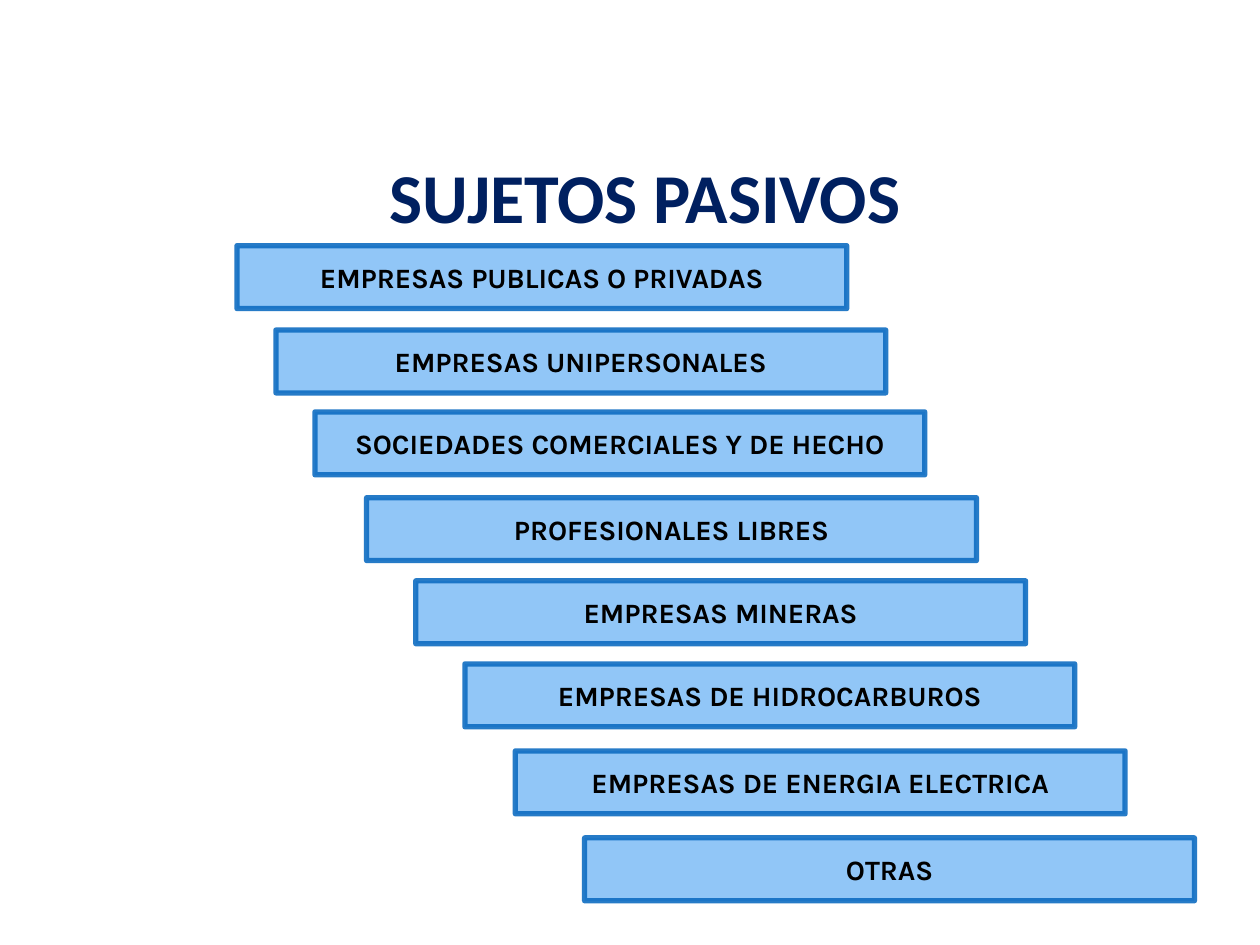
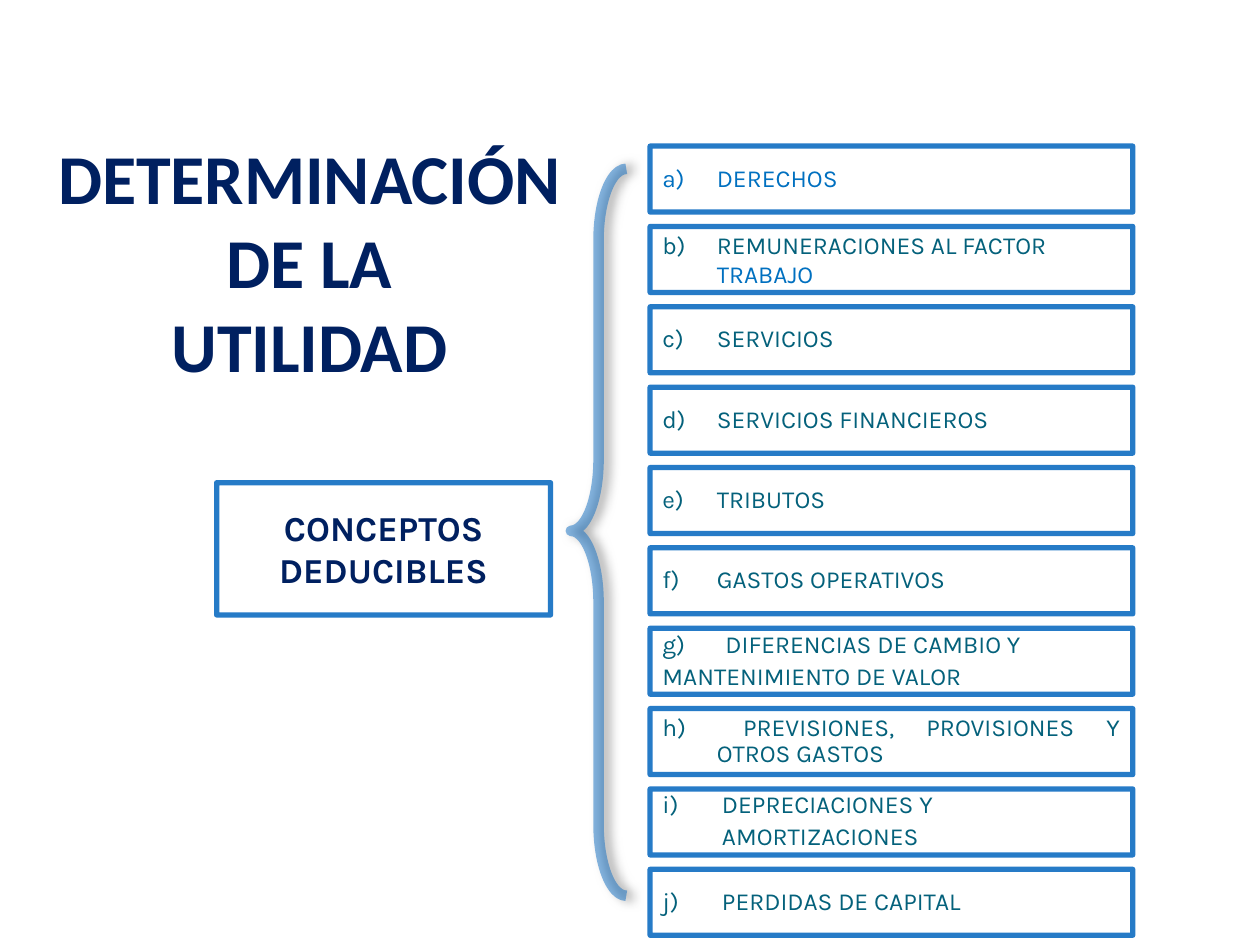
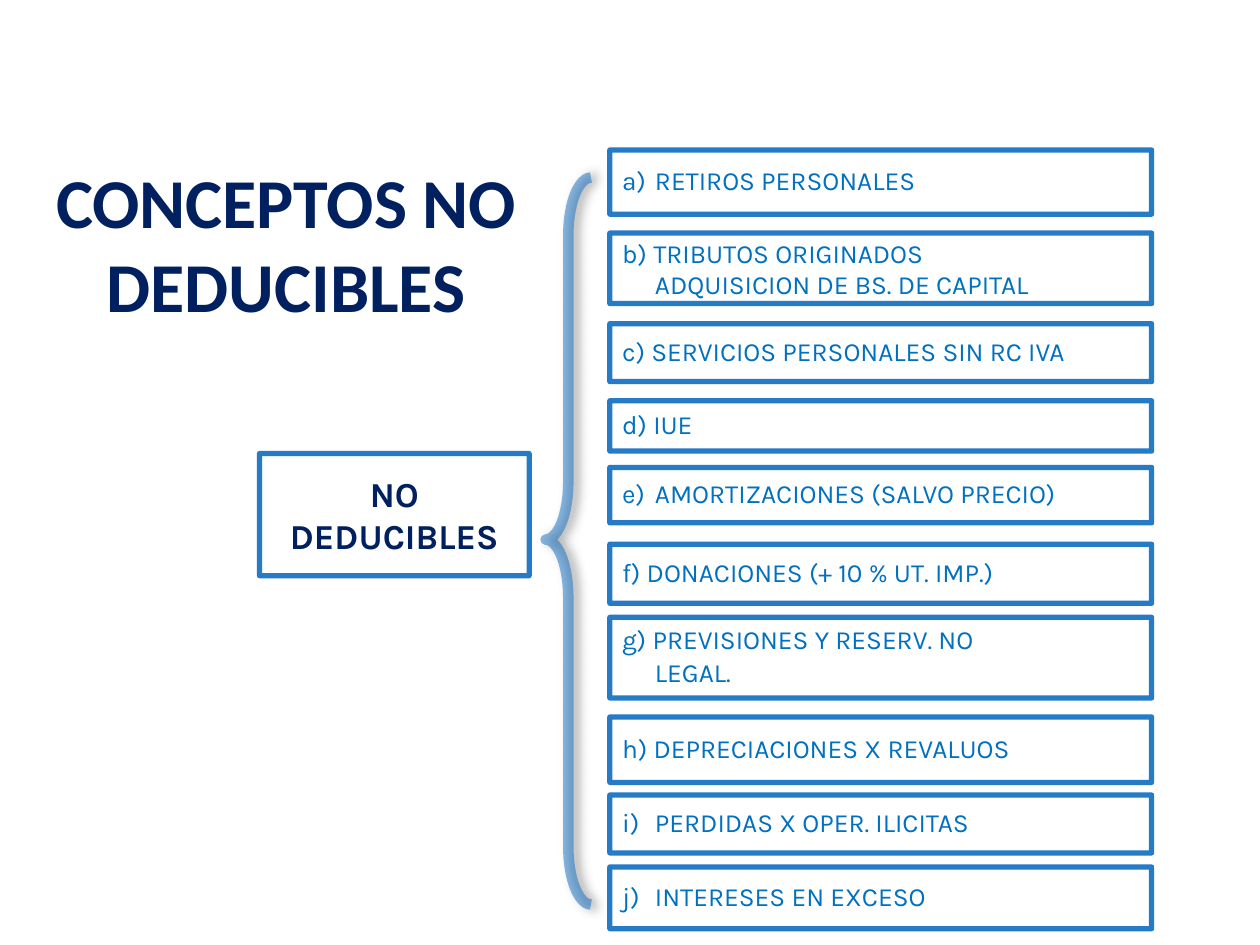
from lxml.etree import SubElement
from pptx import Presentation
from pptx.dml.color import RGBColor
from pptx.enum.shapes import MSO_SHAPE
from pptx.enum.text import MSO_ANCHOR, MSO_AUTO_SIZE, PP_ALIGN
from pptx.oxml.ns import qn
from pptx.util import Pt

COLORS = {
    "navy": "002060",
    "blue": "0070C0",
    "teal": "04617B",
    "line": "0F6DC2",
    "step": "91C6F7",
    "white": "FFFFFF",
    "black": "000000",
}
TITLE_FONT = "Calibri"
BODY_FONT = "Karla"

# Slide 1: text, left and top of each step
STEPS = [
    ("EMPRESAS PUBLICAS O PRIVADAS", 135.4, 140.4),
    ("EMPRESAS UNIPERSONALES", 157.7, 188.6),
    ("SOCIEDADES COMERCIALES Y DE HECHO", 180, 235.4),
    ("PROFESIONALES LIBRES", 209.5, 284.4),
    ("EMPRESAS MINERAS", 237.6, 331.9),
    ("EMPRESAS DE HIDROCARBUROS", 265.7, 379.4),
    ("EMPRESAS DE ENERGIA ELECTRICA", 294.5, 429.1),
    ("OTRAS", 334.1, 478.8),
]

# Slide 2: lines of each concept and the format that differs
DEDUCTIBLE = [
    (["DERECHOS"], {"numbered": True, "color": "blue"}),
    (["b) \tREMUNERACIONES AL FACTOR", "\tTRABAJO"],
     {"spacing": 1, "before": 0, "last_color": "blue"}),
    (["c) \tSERVICIOS"], {}),
    (["d) \tSERVICIOS FINANCIEROS"], {}),
    (["e) \tTRIBUTOS"], {}),
    (["f) \tGASTOS OPERATIVOS"], {}),
    (["DIFERENCIAS DE CAMBIO Y", "MANTENIMIENTO DE VALOR"],
     {"numbered": True, "indent": 36}),
    (["h) \tPREVISIONES, PROVISIONES Y OTROS GASTOS"], {}),
    (["DEPRECIACIONES Y", "\tAMORTIZACIONES"], {"numbered": True, "indent": 34}),
    (["j)\tPERDIDAS DE CAPITAL"], {"indent": 34}),
]
DEDUCTIBLE_ROWS = [(83.5 + 45.92 * index, 37.7) for index in range(len(DEDUCTIBLE))]

# Slide 3: the same, with top and height of each row
NON_DEDUCTIBLE = [
    (["RETIROS PERSONALES"], {"numbered": True}),
    (["b) TRIBUTOS ORIGINADOS", "\tADQUISICION DE BS. DE CAPITAL"],
     {"spacing": 1, "before": 0}),
    (["c) SERVICIOS PERSONALES SIN RC IVA"], {}),
    (["d) IUE"], {}),
    (["e)\tAMORTIZACIONES (SALVO PRECIO)"], {}),
    (["f) DONACIONES (+ 10 % UT. IMP.)"], {"indent": 0}),
    (["g) PREVISIONES Y RESERV. NO", "\tLEGAL."], {}),
    (["h) DEPRECIACIONES X REVALUOS"], {"indent": 0}),
    (["PERDIDAS X OPER. ILICITAS"], {"numbered": True}),
    (["j)\tINTERESES EN EXCESO"], {}),
]
NON_DEDUCTIBLE_ROWS = [
    (85.7, 36.7), (133.2, 40.3), (185, 33.1), (229, 28.8), (267.1, 31.7),
    (311, 33.8), (352.8, 46.1), (409.7, 37.4), (454.3, 33.1), (495.4, 35.3),
]


def rgb(name):
    return RGBColor.from_string(COLORS[name])


def write_text(shape, lines, *, size, color, font=BODY_FONT, bold=False,
               align=PP_ALIGN.CENTER, anchor=MSO_ANCHOR.MIDDLE, spacing=None,
               before=0, indent=0, number=None, last_color=None):
    """Fill a shape with one paragraph per line."""
    frame = shape.text_frame
    frame.word_wrap = True
    frame.auto_size = MSO_AUTO_SIZE.NONE
    frame.vertical_anchor = anchor
    for index, line in enumerate(lines):
        paragraph = frame.paragraphs[0] if index == 0 else frame.add_paragraph()
        paragraph.alignment = align
        paragraph.line_spacing = spacing
        paragraph.space_before = Pt(before if index else 0)
        properties = paragraph._p.get_or_add_pPr()
        if indent:
            properties.set("marL", str(Pt(indent)))
            properties.set("indent", str(-Pt(indent)))
        if number and index == 0:
            SubElement(properties, qn("a:buAutoNum"),
                       type="alphaLcParenR", startAt=str(number))
        run = paragraph.add_run()
        run.text = line
        run.font.name = font
        run.font.size = Pt(size)
        run.font.bold = bold
        is_last = index == len(lines) - 1
        run.font.color.rgb = rgb(last_color if last_color and is_last else color)


def add_title(slide, lines, left, top, width, height):
    title = slide.shapes.title
    title.left, title.top = Pt(left), Pt(top)
    title.width, title.height = Pt(width), Pt(height)
    write_text(title, lines, size=40, color="navy", font=TITLE_FONT, bold=True,
               anchor=MSO_ANCHOR.TOP)


def add_outlined(slide, kind, left, top, width, height, *, fill=None,
                 line_width=3, opacity=90):
    """Add a shape with a translucent blue outline."""
    shape = slide.shapes.add_shape(kind, Pt(left), Pt(top), Pt(width), Pt(height))
    shape.shadow.inherit = False
    if fill:
        shape.fill.solid()
        shape.fill.fore_color.rgb = rgb(fill)
    else:
        shape.fill.background()
    shape.line.width = Pt(line_width)
    shape.line.color.rgb = rgb("line")
    line_color = shape.element.spPr.find(qn("a:ln")).find(".//" + qn("a:srgbClr"))
    SubElement(line_color, qn("a:alpha"), val=str(opacity * 1000))
    return shape


def add_brace(slide, left, top, width, height):
    brace = add_outlined(slide, MSO_SHAPE.LEFT_BRACE, left, top, width, height,
                         line_width=6, opacity=50)
    brace.adjustments[0] = 1.283
    brace.adjustments[1] = 0.498
    # Soft shadow to the right
    effects = brace.element.spPr.find(qn("a:effectLst"))
    shadow = SubElement(effects, qn("a:outerShdw"), blurRad=str(Pt(6)),
                        dist=str(Pt(3)), dir="0", rotWithShape="0")
    shadow_color = SubElement(shadow, qn("a:srgbClr"), val=COLORS["black"])
    SubElement(shadow_color, qn("a:alpha"), val="60000")


def add_label(slide, lines, left, top, width, height):
    label = add_outlined(slide, MSO_SHAPE.FLOWCHART_PROCESS, left, top, width, height,
                         fill="white")
    write_text(label, lines, size=20, color="navy", bold=True)


def add_concepts(slide, concepts, rows, left, width, **defaults):
    """Stack one lettered box per concept."""
    for number, ((lines, changes), (top, height)) in enumerate(zip(concepts, rows), 1):
        box = add_outlined(slide, MSO_SHAPE.FLOWCHART_PROCESS, left, top, width, height,
                           fill="white")
        text_format = {"spacing": 0.9, "before": 3, **defaults, **changes}
        numbered = text_format.pop("numbered", False)
        write_text(box, lines, align=PP_ALIGN.JUSTIFY,
                   number=number if numbered else None, **text_format)


def build_taxpayers(slide):
    for text, left, top in STEPS:
        step = add_outlined(slide, MSO_SHAPE.RECTANGLE, left, top, 348.5, 36, fill="step")
        write_text(step, [text], size=16, color="black", bold=True)
    add_title(slide, ["SUJETOS PASIVOS"], 123.8, 84.2, 489.6, 55.4)


def build_deductible(slide):
    add_concepts(slide, DEDUCTIBLE, DEDUCTIBLE_ROWS, 371.5, 275.8,
                 size=14, color="teal", indent=31)
    add_label(slide, ["CONCEPTOS", "DEDUCIBLES"], 123.8, 275.8, 190.8, 75.6)
    add_brace(slide, 326.2, 96.5, 31.7, 415.4)
    add_title(slide, ["DETERMINACIÓN DE LA", "UTILIDAD"], 16.6, 73.4, 320.4, 152.6)


def build_non_deductible(slide):
    add_concepts(slide, NON_DEDUCTIBLE, NON_DEDUCTIBLE_ROWS, 348.5, 309.6,
                 size=15, color="blue", indent=18.7)
    add_label(slide, ["NO", "DEDUCIBLES"], 148.3, 259.2, 154.1, 69.8)
    add_brace(slide, 311.8, 101.5, 25.9, 415.4)
    add_title(slide, ["CONCEPTOS NO DEDUCIBLES"], 5.8, 87.1, 315.4, 104.4)


def main():
    presentation = Presentation()
    presentation.slide_width = Pt(720)
    presentation.slide_height = Pt(540)
    title_only = presentation.slide_layouts[5]
    for build in (build_taxpayers, build_deductible, build_non_deductible):
        build(presentation.slides.add_slide(title_only))
    presentation.save("out.pptx")


if __name__ == "__main__":
    main()
